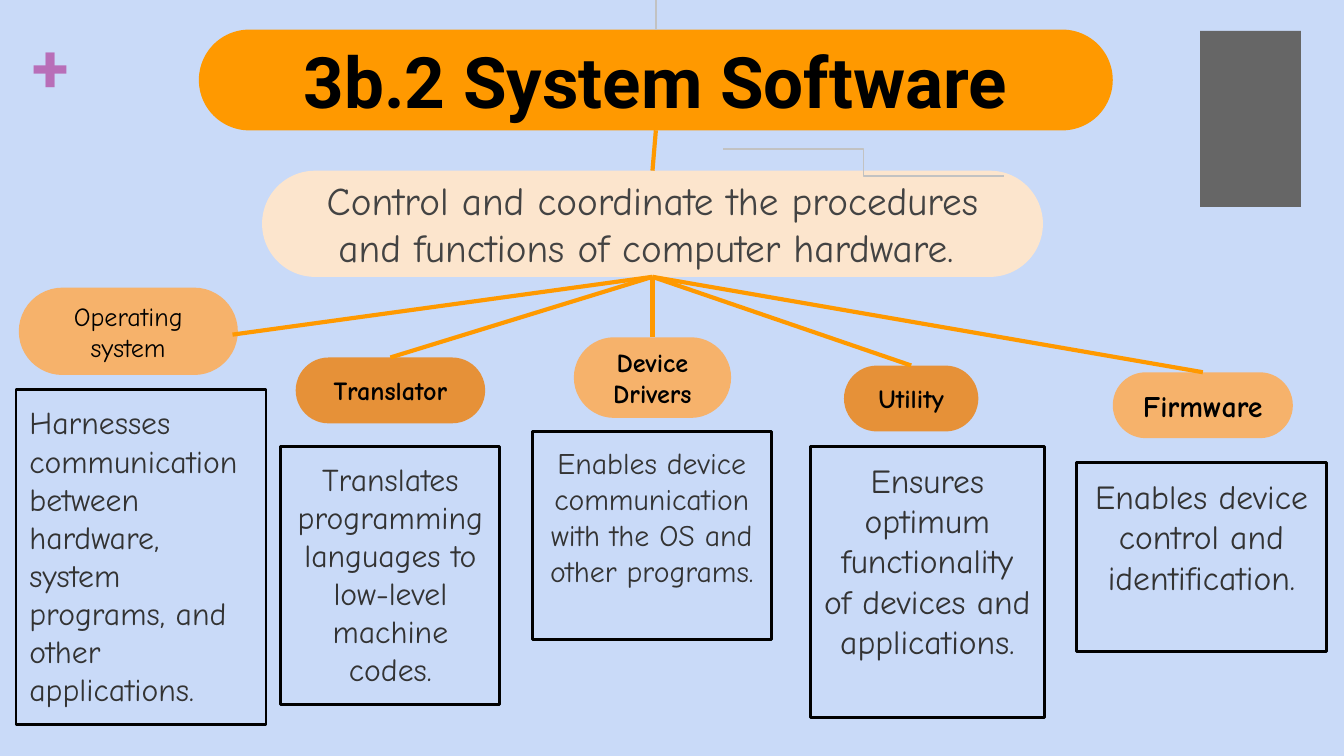
from lxml import etree
from pptx import Presentation
from pptx.dml.color import RGBColor
from pptx.enum.shapes import MSO_CONNECTOR, MSO_SHAPE
from pptx.enum.text import MSO_ANCHOR, PP_ALIGN
from pptx.oxml.ns import qn
from pptx.util import Inches, Pt

RECTANGLE, ROUNDED = MSO_SHAPE.RECTANGLE, MSO_SHAPE.ROUNDED_RECTANGLE
STRAIGHT, ELBOW = MSO_CONNECTOR.STRAIGHT, MSO_CONNECTOR.ELBOW
TOP, MIDDLE = MSO_ANCHOR.TOP, MSO_ANCHOR.MIDDLE
LEFT, CENTER = PP_ALIGN.LEFT, PP_ALIGN.CENTER

COLUMNS, ROWS = 100, 56.25
COLOURS = {
    "sky": "C9DAF8", "orange": "FF9900", "cream": "FCE5CD", "apricot": "F6B26B",
    "amber": "E69138", "slate": "666666", "silver": "C2C2C2", "orchid": "B86EB8",
    "black": "000000", "charcoal": "434343", "ink": "333333",
}
BODY = "Comic Neue"

TITLE = (14.8, 2.2, 68, 7.5)
SUMMARY = (19.5, 12.7, 58.1, 7.9)
BRANCHES = [
    {"label": "Operating system", "pill": (1.4, 21.4, 16.3, 6.5), "fill": "apricot",
     "font": {"size": 14}, "joint": (17.3, 24.9), "card": (1.2, 29, 18.6, 24.9),
     "size": 17, "align": LEFT,
     "text": "Harnesses communication between hardware, system programs, and other applications."},
    {"label": "Translator", "pill": (22, 26.6, 14.1, 4.9), "fill": "amber",
     "font": {"size": 14, "bold": True}, "card": (20.9, 33.2, 16.3, 19.2), "size": 17,
     "text": "Translates programming languages to low-level machine codes."},
    {"label": "Device Drivers", "pill": (42.7, 25.1, 11.7, 6), "fill": "apricot",
     "font": {"size": 14, "bold": True}, "card": (39.6, 32.1, 17.8, 15.5), "size": 16,
     "text": "Enables device communication with the OS and other programs."},
    {"label": "Utility", "pill": (62.8, 27.2, 10, 4.9), "fill": "amber",
     "font": {"size": 14, "bold": True}, "card": (60.3, 33.2, 17.4, 20.2), "size": 18,
     "text": "Ensures optimum functionality of devices and applications."},
    {"label": "Firmware", "pill": (82.8, 27.7, 13.4, 4.9), "fill": "apricot",
     "font": {"size": 16, "bold": True}, "card": (80.1, 34.4, 18.6, 14.1), "size": 18,
     "text": "Enables device control and identification."},
]


def top_center(area):
    left, top, width, _ = area
    return left + width / 2, top


def bottom_center(area):
    left, top, width, height = area
    return left + width / 2, top + height


class Diagram:
    """Draws the diagram's elements on the current slide by grid columns and rows."""

    def __init__(self, deck):
        self.deck = deck
        self.page = deck.slides.add_slide(deck.slide_layouts[6])
        self.page.background.fill.solid()
        self.page.background.fill.fore_color.rgb = self.colour("sky")

    def colour(self, name):
        return RGBColor.from_string(COLOURS[name])

    def place(self, *lengths):
        units = (self.deck.slide_width / COLUMNS, self.deck.slide_height / ROWS)
        return [round(length * units[i % 2]) for i, length in enumerate(lengths)]

    def add_text(self, shape, text, colour, size, align=CENTER, anchor=MIDDLE,
                 inset=0.1, wrap=True, name=BODY, bold=False):
        frame = shape.text_frame
        frame_format = {"word_wrap": wrap, "vertical_anchor": anchor}
        for side in ("left", "right", "top", "bottom"):
            frame_format[f"margin_{side}"] = Inches(inset)
        for key, value in frame_format.items():
            setattr(frame, key, value)
        para = frame.paragraphs[0]
        para.alignment = align
        span = para.add_run()
        span.text = text
        for key, value in {"name": name, "size": Pt(size), "bold": bold}.items():
            setattr(span.font, key, value)
        span.font.color.rgb = self.colour(colour)

    def block(self, area, fill, kind=RECTANGLE):
        shape = self.page.shapes.add_shape(kind, *self.place(*area))
        shape.shadow.inherit = False
        shape.fill.solid()
        shape.fill.fore_color.rgb = self.colour(fill)
        shape.line.fill.background()
        return shape

    def pill(self, area, fill, text, colour, **font):
        shape = self.block(area, fill, ROUNDED)
        shape.adjustments[0] = 0.5
        self.add_text(shape, text, colour, **font)

    def card(self, area, text, size, align):
        shape = self.block(area, "sky")
        shape.fill.background()
        shape.line.color.rgb = self.colour("black")
        shape.line.width = Pt(1.5)
        self.add_text(shape, text, "ink", size, align, TOP)

    def label(self, area, text, colour, **font):
        box = self.page.shapes.add_textbox(*self.place(*area))
        self.add_text(box, text, colour, **font)

    def link(self, start, end, colour="orange", width=2.25, kind=STRAIGHT):
        line = self.page.shapes.add_connector(kind, *self.place(*start, *end))
        line.line.color.rgb = self.colour(colour)
        line.line.width = Pt(width)
        etree.SubElement(line._element.spPr, qn("a:effectLst"))


def main():
    deck = Presentation()
    deck.slide_width, deck.slide_height = Inches(10), Inches(5.625)
    diagram = Diagram(deck)
    diagram.block((89.3, 2.3, 7.5, 13.1), "slate")
    diagram.label((2.4, 1.9, 2.9, 4.5), "+", "orchid", size=36, name="Roboto Slab",
                  bold=True, align=LEFT, anchor=TOP, inset=0, wrap=False)
    diagram.pill(TITLE, "orange", "3b.2 System Software", "black",
                 size=38, name="Roboto", bold=True)
    diagram.pill(SUMMARY, "cream",
                 "Control and coordinate the procedures and functions of computer hardware. ",
                 "charcoal", size=21)
    diagram.link((53.8, 11.1), (74.7, 13.1), "silver", 0.75, ELBOW)
    diagram.link(top_center(TITLE), (48.8, 0), "silver", 0.75)
    diagram.link(bottom_center(TITLE), top_center(SUMMARY))
    for branch in BRANCHES:
        pill = branch["pill"]
        diagram.pill(pill, branch["fill"], branch["label"], "black", **branch["font"])
        diagram.link(bottom_center(SUMMARY), branch.get("joint", top_center(pill)))
        diagram.card(branch["card"], branch["text"], branch["size"],
                     branch.get("align", CENTER))
    deck.save("out.pptx")


if __name__ == "__main__":
    main()
